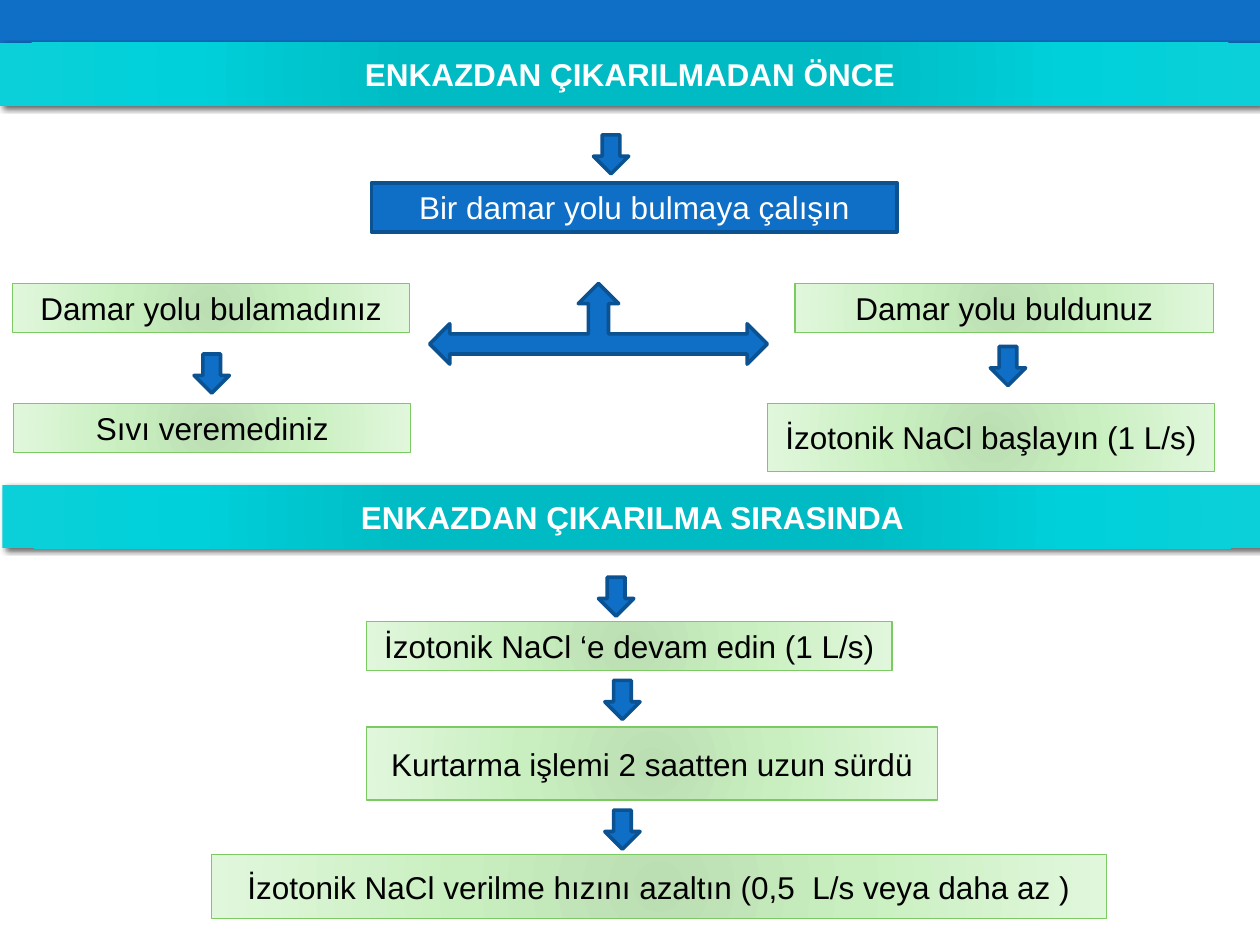
from pptx import Presentation
from pptx import util as u
from pptx.dml.color import RGBColor
from pptx.enum import shapes, text
from pptx.oxml import parse_xml
from pptx.oxml.ns import nsdecls

BLUE = RGBColor(0x0F, 0x6F, 0xC6)
DARK_BLUE = RGBColor(0x0B, 0x52, 0x92)
GREEN = RGBColor(0x7C, 0xCA, 0x62)
WHITE = RGBColor(0xFF, 0xFF, 0xFF)
BLACK = RGBColor(0x00, 0x00, 0x00)
TEAL_STOPS = [
    (0, RGBColor(0x00, 0xBB, 0xC3)),
    (34, RGBColor(0x00, 0xBB, 0xC3)),
    (70, RGBColor(0x00, 0xD0, 0xDA)),
    (100, RGBColor(0x0B, 0xD0, 0xD9)),
]
GREEN_STOPS = [
    (0, RGBColor(0xBB, 0xDE, 0xB3)),
    (45, RGBColor(0xC9, 0xEF, 0xC0)),
    (100, RGBColor(0xE1, 0xF7, 0xDC)),
]
KIND = shapes.MSO_SHAPE


class FlowSlide:
    font_format = {"name": "Arial", "size": u.Pt(18)}
    frame_format = {"word_wrap": True, "vertical_anchor": text.MSO_ANCHOR.MIDDLE}
    arrow_size = (0.28, 0.31)

    def __init__(self, slide):
        self.slide = slide

    def add(self, kind, box, fill, line=None, width=0):
        """Add a shape; fill is one colour or a list of gradient stops."""
        shape = self.slide.shapes.add_shape(kind, *map(u.Inches, box))
        if isinstance(fill, list):
            self.fill_radial(shape, fill)
        else:
            shape.fill.solid()
            shape.fill.fore_color.rgb = fill
        if line is None:
            shape.line.fill.background()
        else:
            shape.line.color.rgb = line
            shape.line.width = u.Pt(width)
        shape.shadow.inherit = False
        return shape

    def fill_radial(self, shape, stops):
        stop_xml = "".join(
            f'<a:gs pos="{position * 1000}"><a:srgbClr val="{color}"/></a:gs>'
            for position, color in stops
        )
        shape._element.spPr.insert(2, parse_xml(
            f'<a:gradFill {nsdecls("a")} rotWithShape="1"><a:gsLst>{stop_xml}</a:gsLst>'
            '<a:path path="circle">'
            '<a:fillToRect l="100000" t="100000" r="100000" b="100000"/>'
            '</a:path></a:gradFill>'
        ))

    def label(self, shape, words, color, bold=False):
        frame = shape.text_frame
        for name, value in self.frame_format.items():
            setattr(frame, name, value)
        paragraph = frame.paragraphs[0]
        paragraph.alignment = text.PP_ALIGN.CENTER
        run = paragraph.add_run()
        run.text = words
        for name, value in {**self.font_format, "bold": bold}.items():
            setattr(run.font, name, value)
        run.font.color.rgb = color

    def heading(self, left, top, words):
        band = self.add(KIND.RECTANGLE, (left, top, 10, 0.5), TEAL_STOPS)
        band._element.spPr.effectLst.append(parse_xml(
            f'<a:outerShdw {nsdecls("a")} blurRad="{u.Pt(3)}" dist="{u.Pt(2)}" '
            'dir="2700000" algn="tl" rotWithShape="0">'
            '<a:srgbClr val="000000"><a:alpha val="60000"/></a:srgbClr></a:outerShdw>'
        ))
        self.label(band, words, WHITE, bold=True)

    def action(self, box, words):
        self.label(self.add(KIND.RECTANGLE, box, BLUE, DARK_BLUE, 2.08), words, WHITE)

    def step(self, box, words):
        self.label(self.add(KIND.RECTANGLE, box, GREEN_STOPS, GREEN, 0.75), words, BLACK)

    def down_arrow(self, left, top):
        self.add(KIND.DOWN_ARROW, (left, top, *self.arrow_size), BLUE, DARK_BLUE, 2.08)

    def branch_arrow(self, box):
        self.add(KIND.LEFT_RIGHT_UP_ARROW, box, BLUE, DARK_BLUE, 2.08)


STEPS = [
    ((0.1, 2.25, 3.15, 0.39), "Damar yolu bulamadınız"),
    ((0.11, 3.2, 3.15, 0.39), "Sıvı veremediniz"),
    ((6.31, 2.25, 3.32, 0.39), "Damar yolu buldunuz"),
    ((6.09, 3.2, 3.55, 0.54), "İzotonik NaCl başlayın (1 L/s)"),
    ((2.91, 4.93, 4.17, 0.39), "İzotonik NaCl ‘e devam edin (1 L/s)"),
    ((2.91, 5.77, 4.53, 0.58), "Kurtarma işlemi 2 saatten uzun sürdü"),
    ((1.68, 6.78, 7.1, 0.51), "İzotonik NaCl verilme hızını azaltın (0,5  L/s veya daha az )"),
]
DOWN_ARROWS = [(4.71, 1.07), (7.86, 2.75), (1.54, 2.81),
               (4.75, 4.58), (4.8, 5.4), (4.8, 6.43)]


def main():
    deck = Presentation()
    deck.slide_width, deck.slide_height = u.Inches(10), u.Inches(7.5)
    flow = FlowSlide(deck.slides.add_slide(deck.slide_layouts[6]))

    flow.add(KIND.RECTANGLE, (0, 0, 10, 0.4), BLUE)
    flow.heading(0, 0.34, "ENKAZDAN ÇIKARILMADAN ÖNCE")
    flow.action((2.95, 1.45, 4.17, 0.39), "Bir damar yolu bulmaya çalışın")
    flow.heading(0.02, 3.85, "ENKAZDAN ÇIKARILMA SIRASINDA")
    for box, words in STEPS:
        flow.step(box, words)
    flow.branch_arrow((3.41, 2.25, 2.68, 0.64))
    for left, top in DOWN_ARROWS:
        flow.down_arrow(left, top)

    deck.save("out.pptx")


if __name__ == "__main__":
    main()
